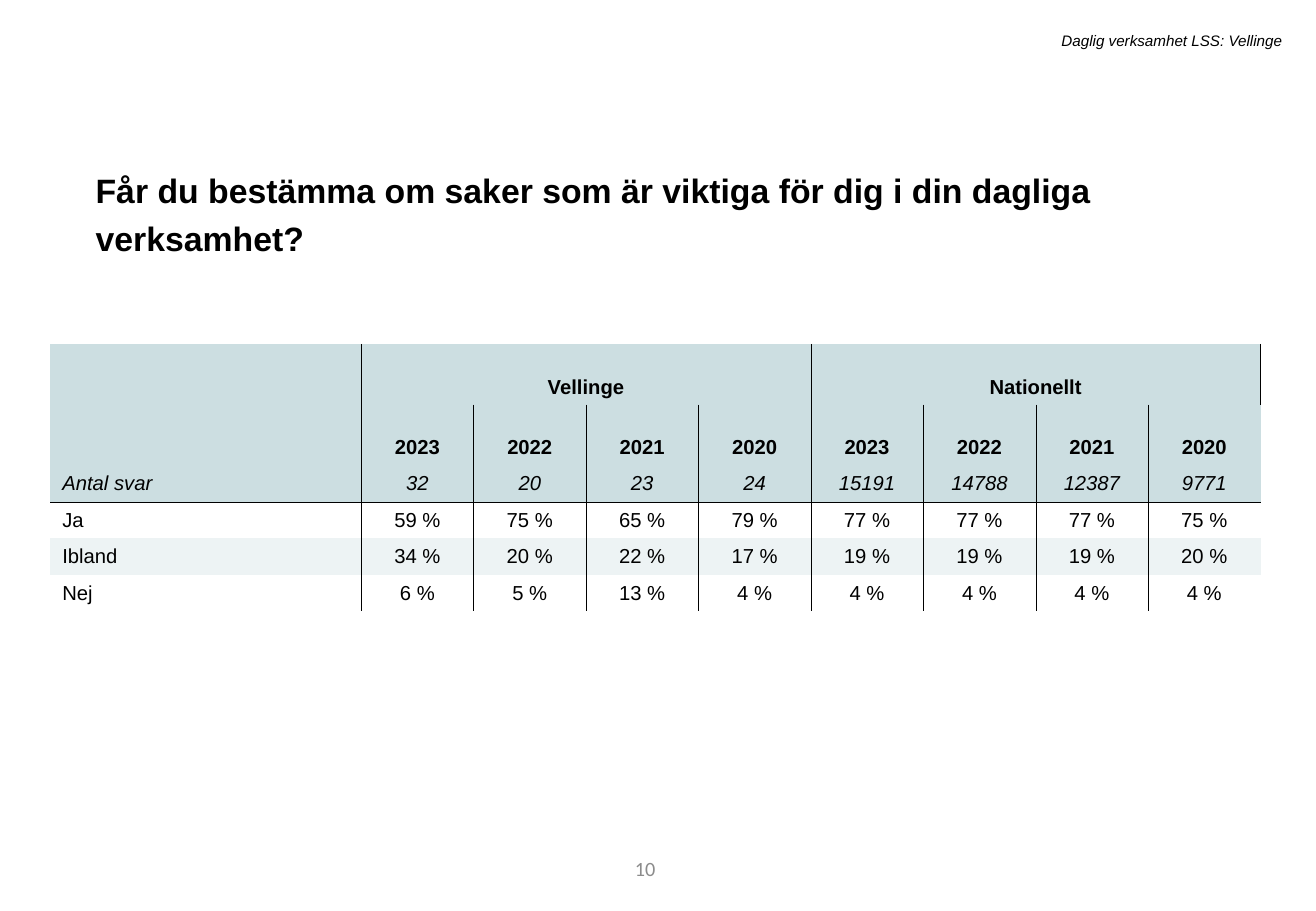
from lxml.etree import SubElement
from pptx import Presentation
from pptx.dml.color import RGBColor
from pptx.enum.text import MSO_ANCHOR, PP_ALIGN
from pptx.oxml.ns import qn
from pptx.util import Cm, Pt

COLORS = {"ink": "000000", "page": "8C8C8C", "head": "CCDEE1", "band": "EDF3F4"}
YEARS = ["2023", "2022", "2021", "2020"]
ROWS = [
    ["", "Vellinge", "", "", "", "Nationellt", "", "", ""],
    ["", *YEARS, *YEARS],
    ["Antal svar", "32", "20", "23", "24", "15191", "14788", "12387", "9771"],
    ["Ja", "59 %", "75 %", "65 %", "79 %", "77 %", "77 %", "77 %", "75 %"],
    ["Ibland", "34 %", "20 %", "22 %", "17 %", "19 %", "19 %", "19 %", "20 %"],
    ["Nej", "6 %", "5 %", "13 %", "4 %", "4 %", "4 %", "4 %", "4 %"],
]
GROUPS = (1, 5)
SPAN = len(YEARS)
LAST = len(ROWS[0]) - 1
COUNT = 2


def add_run(para, text, size, color="ink", font="Arial", bold=False, italic=False):
    run = para.add_run()
    run.text = text
    run.font.name = font
    run.font.size = Pt(size)
    run.font.bold = bold
    run.font.italic = italic
    run.font.color.rgb = RGBColor.from_string(COLORS[color])


def add_box(slide, box, align, anchor=MSO_ANCHOR.TOP):
    frame = slide.shapes.add_textbox(*(Cm(n) for n in box)).text_frame
    frame.word_wrap = True
    frame.vertical_anchor = anchor
    para = frame.paragraphs[0]
    para.alignment = align
    return para


def add_header(slide, box):
    para = add_box(slide, box, PP_ALIGN.RIGHT)
    add_run(para, "Daglig verksamhet LSS: Vellinge", 9, italic=True)


def add_title(slide, box):
    para = add_box(slide, box, PP_ALIGN.LEFT)
    para.line_spacing = 1.2
    para.space_before = Pt(10)
    title = "Får du bestämma om saker som är viktiga för dig i din dagliga verksamhet?"
    add_run(para, title, 20, bold=True)


def add_page(slide, box):
    para = add_box(slide, box, PP_ALIGN.RIGHT, MSO_ANCHOR.MIDDLE)
    add_run(para, "10", 12, "page", "Calibri")


def find_sides(row, col):
    if row == 0:
        sides = "LR" if col in GROUPS else "R" if col % SPAN == 0 else ""
    else:
        sides = ("L" if col > 0 else "") + ("R" if col < LAST else "")
    if row == COUNT:
        sides += "B"
    if row == COUNT + 1:
        sides += "T"
    return sides


def draw_sides(cell, sides):
    props = cell._tc.get_or_add_tcPr()
    for pos, side in enumerate("LRTB"):
        line = SubElement(props, qn(f"a:ln{side}"), w=str(Pt(0.25)))
        if side in sides:
            fill = SubElement(line, qn("a:solidFill"))
            SubElement(fill, qn("a:srgbClr"), val=COLORS["ink"])
        else:
            SubElement(line, qn("a:noFill"))
        props.insert(pos, line)


def fill_cell(cell, row, col, text):
    if row <= COUNT or row == 4:
        cell.fill.solid()
        shade = "head" if row <= COUNT else "band"
        cell.fill.fore_color.rgb = RGBColor.from_string(COLORS[shade])
    else:
        cell.fill.background()
    draw_sides(cell, find_sides(row, col))
    cell.vertical_anchor = MSO_ANCHOR.BOTTOM if row < COUNT else MSO_ANCHOR.MIDDLE
    if text:
        para = cell.text_frame.paragraphs[0]
        para.alignment = PP_ALIGN.CENTER if col else PP_ALIGN.LEFT
        add_run(para, text, 12, bold=row < COUNT, italic=row == COUNT)


def add_grid(slide, box):
    left, top, width, height = box
    first, tall = 6.5, 1.27
    size = [Cm(n) for n in (left, top, width, height)]
    table = slide.shapes.add_table(len(ROWS), LAST + 1, *size).table
    table.first_row = False
    table.horz_banding = False
    for col, item in enumerate(table.columns):
        item.width = Cm((width - first) / LAST if col else first)
    low = (height - COUNT * tall) / (len(ROWS) - COUNT)
    for row, item in enumerate(table.rows):
        item.height = Cm(tall if row < COUNT else low)
    for col in GROUPS:
        table.cell(0, col).merge(table.cell(0, col + SPAN - 1))
    for row, texts in enumerate(ROWS):
        for col, text in enumerate(texts):
            fill_cell(table.cell(row, col), row, col, text)


def main():
    deck = Presentation()
    deck.slide_width = Cm(27.51)
    deck.slide_height = Cm(19.05)
    slide = deck.slides.add_slide(deck.slide_layouts[6])
    add_page(slide, (7.75, 17.65, 6.2, 1.02))
    add_title(slide, (1.75, 3.25, 23.88, 1.2))
    add_grid(slide, (1.05, 7.19, 25.3, 5.58))
    add_header(slide, (4.55, 0.53, 22.5, 0.64))
    deck.save("out.pptx")


if __name__ == "__main__":
    main()
